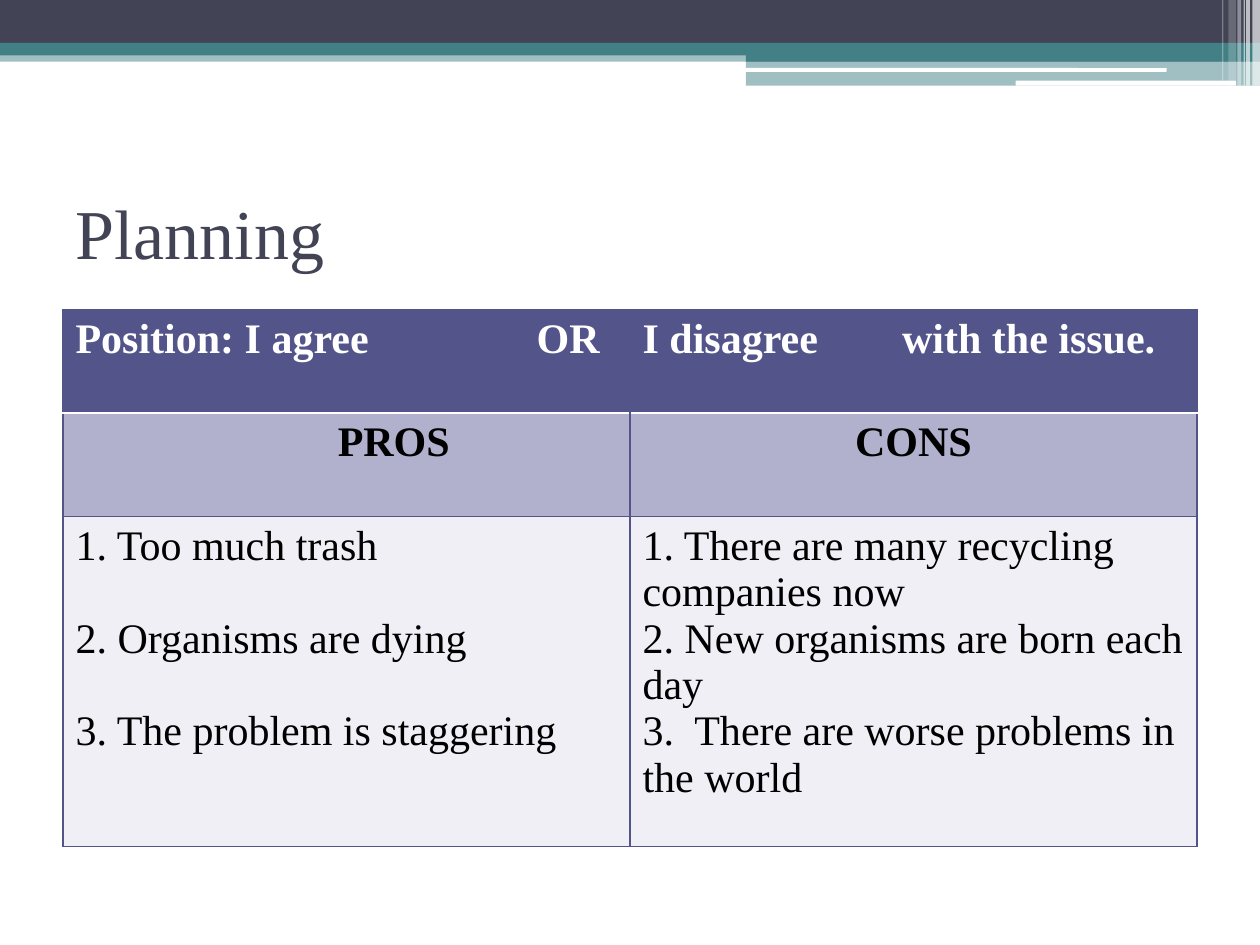
from typing import NamedTuple, Optional

from lxml import etree
from pptx import Presentation
from pptx import util as u
from pptx.dml.color import RGBColor
from pptx.enum import shapes, text
from pptx.oxml.ns import qn

FONT = "Times New Roman"
NAVY, TEAL, WHITE, BLACK = "424456", "438086", "FFFFFF", "000000"
PURPLE, LILAC, PALE = "53548A", "B1B1CE", "F0EFF5"


class Bar(NamedTuple):
    left: float
    top: float
    width: float
    height: float
    color: str
    opacity: int = 100
    rounded: bool = False


class Cell(NamedTuple):
    lines: list
    fill: str
    color: str = BLACK
    bold: bool = False
    align: text.PP_ALIGN = text.PP_ALIGN.LEFT
    tab: Optional[float] = None
    indent: float = 0
    gap: float = 0


def rgb(value: str) -> RGBColor:
    return RGBColor.from_string(value)


def add_bar(s, bar: Bar) -> None:
    kind = shapes.MSO_SHAPE.ROUNDED_RECTANGLE if bar.rounded else shapes.MSO_SHAPE.RECTANGLE
    sp = s.shapes.add_shape(kind, *(u.Inches(v) for v in bar[:4]))
    sp.shadow.inherit = False
    sp.line.fill.background()
    sp.fill.solid()
    sp.fill.fore_color.rgb = rgb(bar.color)
    if bar.opacity < 100:
        clr = sp.fill._xPr.find(".//" + qn("a:srgbClr"))
        etree.SubElement(clr, qn("a:alpha"), val=str(bar.opacity * 1000))


def write(p, content: str, *, size: float, color: str, bold: bool = False,
          align=text.PP_ALIGN.LEFT, before: float = 0,
          indent: float = 0, tab: Optional[float] = None) -> None:
    p.alignment = align
    p.space_before = u.Pt(before)
    pPr = p._p.get_or_add_pPr()
    if indent:
        pPr.set("marL", str(u.Inches(indent)))
        pPr.set("indent", "0")
    if tab is not None:
        tabs = etree.SubElement(pPr, qn("a:tabLst"))
        etree.SubElement(tabs, qn("a:tab"), pos=str(u.Inches(tab)), algn="l")
    r = p.add_run()
    r.text = content
    r.font.name, r.font.size, r.font.bold = FONT, u.Pt(size), bold
    r.font.color.rgb = rgb(color)


def set_borders(cell, borders: dict) -> None:
    tcPr = cell._tc.get_or_add_tcPr()
    for i, side in enumerate("LRTB"):
        color, width = borders[side]
        ln = etree.Element(qn("a:ln" + side), w=str(u.Pt(width)))
        if color:
            fill = etree.SubElement(ln, qn("a:solidFill"))
            etree.SubElement(fill, qn("a:srgbClr"), val=color)
        else:
            etree.SubElement(ln, qn("a:noFill"))
        tcPr.insert(i, ln)


def fill_cell(cell, data: Cell) -> None:
    cell.fill.solid()
    cell.fill.fore_color.rgb = rgb(data.fill)
    tf = cell.text_frame
    for i, line in enumerate(data.lines):
        p = tf.add_paragraph() if i else tf.paragraphs[0]
        write(p, line, size=24, color=data.color, bold=data.bold, align=data.align,
              before=data.gap if i else 0, indent=data.indent, tab=data.tab)


BARS = [
    # Bands across the top
    Bar(0, 0.4, 10, 0.09, TEAL, 50),
    Bar(0, 0, 10, 0.34, NAVY),
    Bar(0, 0.34, 10, 0.1, TEAL),
    Bar(5.92, 0.39, 4.08, 0.1, TEAL),
    Bar(5.92, 0.48, 4.08, 0.2, TEAL, 50),
    Bar(5.91, 0.54, 3.35, 0.03, WHITE, rounded=True),
    Bar(8.06, 0.64, 1.75, 0.04, WHITE, rounded=True),
    # Stripes at the right edge
    Bar(9.94, 0, 0.06, 0.68, WHITE, 65),
    Bar(9.89, 0, 0.03, 0.68, WHITE, 65),
    Bar(9.87, 0, 0.01, 0.68, WHITE, 60),
    Bar(9.82, 0, 0.03, 0.68, WHITE, 40),
    Bar(9.75, 0, 0.06, 0.64, WHITE, 20),
    Bar(9.7, 0, 0.01, 0.64, WHITE, 30),
]

CENTER = text.PP_ALIGN.CENTER
ROWS = [
    [Cell(["Position: I agree\tOR"], PURPLE, WHITE, True, tab=3.66),
     Cell(["I disagree\twith the issue."], PURPLE, WHITE, True, tab=2.06)],
    [Cell(["PROS"], LILAC, bold=True, align=CENTER, indent=0.75),
     Cell(["CONS"], LILAC, bold=True, align=CENTER)],
    [Cell(["1. Too much trash", "2. Organisms are dying",
           "3. The problem is staggering"], PALE, gap=26.5),
     Cell(["1. There are many recycling companies now",
           "2. New organisms are born each day",
           "3.  There are worse problems in the world"], PALE)],
]
ROW_HEIGHTS = [0.82, 0.82, 2.62]


def add_planning_table(s) -> None:
    frame = s.shapes.add_table(len(ROWS), 2, u.Inches(0.5), u.Inches(2.46),
                               u.Inches(9), u.Inches(sum(ROW_HEIGHTS)))
    table = frame.table
    for column in table.columns:
        column.width = u.Inches(4.5)
    edge, divider, none = (PURPLE, 0.75), (WHITE, 1.5), (None, 0)
    for i, (row, height) in enumerate(zip(ROWS, ROW_HEIGHTS)):
        table.rows[i].height = u.Inches(height)
        for j, data in enumerate(row):
            cell = table.cell(i, j)
            fill_cell(cell, data)
            borders = dict.fromkeys("LRTB", edge)
            if i == 0:
                borders["B"] = divider
                borders["R" if j == 0 else "L"] = none
            elif i == 1:
                borders["T"] = divider
            set_borders(cell, borders)


def main() -> None:
    prs = Presentation()
    prs.slide_width, prs.slide_height = u.Inches(10), u.Inches(7.5)
    s = prs.slides.add_slide(prs.slide_layouts[5])

    for bar in BARS:
        add_bar(s, bar)

    # Title
    title = s.shapes.title
    title.left, title.top = u.Inches(0.5), u.Inches(1.25)
    title.width, title.height = u.Inches(9), u.Inches(1.17)
    tf = title.text_frame
    tf.vertical_anchor = text.MSO_ANCHOR.MIDDLE
    write(tf.paragraphs[0], "Planning", size=40, color=NAVY)

    add_planning_table(s)
    prs.save("out.pptx")


if __name__ == "__main__":
    main()
